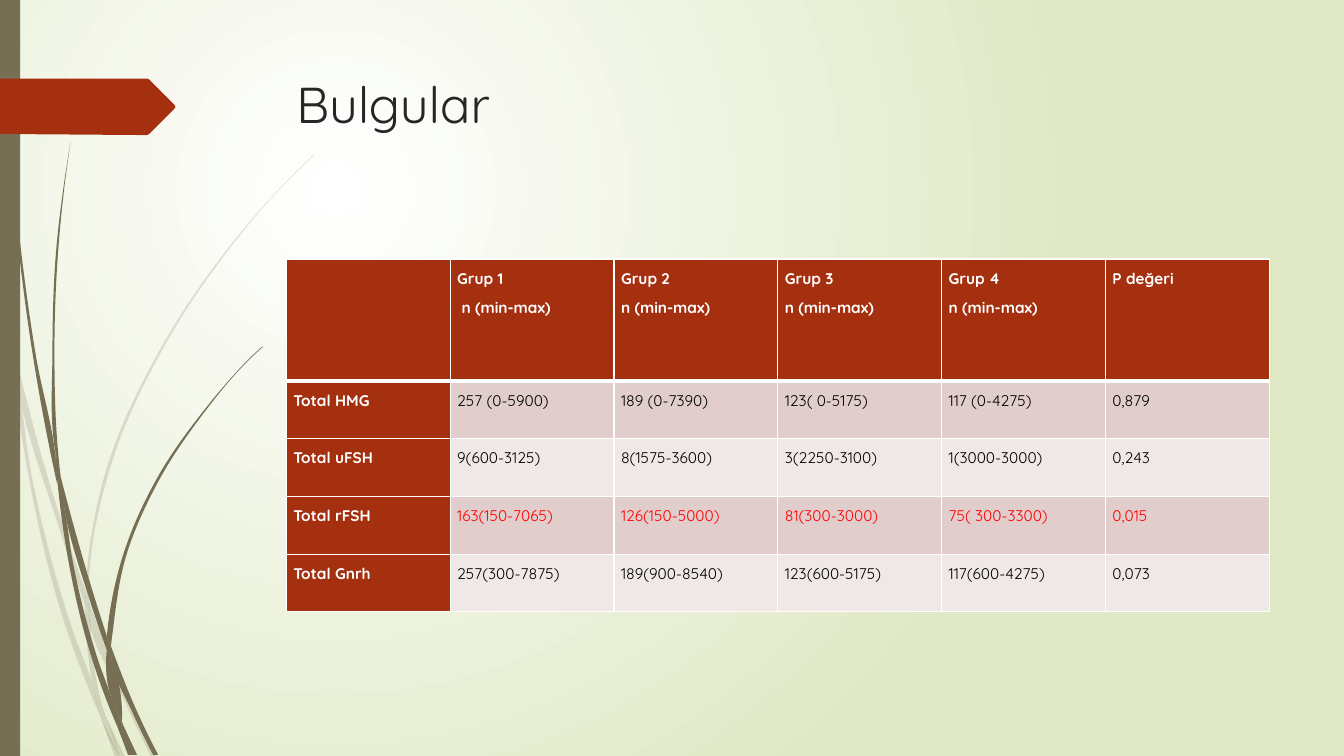
"""Build the findings slide: a title and a table of group results beside grass wisps."""
from lxml import etree
from pptx import Presentation
from pptx import util as u
from pptx.dml.color import RGBColor
from pptx.enum import shapes, text
from pptx.oxml.ns import qn

WHITE = RGBColor(0xFF, 0xFF, 0xFF)
BLACK = RGBColor(0, 0, 0)
RED = RGBColor(0xFF, 0, 0)
RUST = RGBColor(0xA5, 0x30, 0x10)
OLIVE = RGBColor(0x76, 0x6F, 0x54)
PALE_GREEN = RGBColor(0xDF, 0xE8, 0xC4)
CHARCOAL = RGBColor(0x26, 0x26, 0x26)
BANDS = [RGBColor(0xE1, 0xCD, 0xCC), RGBColor(0xF0, 0xE8, 0xE7)]
FONT = "Quicksand"

FAINT_WISPS = [
    [[(0.11, 3.5), (0.09, 3.22), (0, 2.82)], [(0, 2.99), (0.1, 3.44), (0.11, 3.5)]],
    [[(0.14, 3.45), (0.17, 3.76), (0.58, 5.22), (0.84, 5.99)],
     [(0.85, 5.86), (0.62, 5.2), (0.14, 3.45)]],
    [[(0.88, 5.96), (0.88, 6.1), (1.23, 6.94), (1.5, 7.51)],
     [(1.55, 7.51), (1.27, 6.92), (0.92, 6.07), (0.88, 5.96)]],
    [[(1.19, 7.51), (1.24, 7.51)], [(1.05, 7.11), (1.19, 7.51)]],
    [[(0.11, 3.5), (0.28, 4.7), (0.65, 6.21), (0.92, 6.93), (1.01, 7.14)],
     [(0.99, 7.07), (0.93, 6.83), (0.7, 6.19), (0.31, 4.69), (0.17, 3.76), (0.11, 3.5)]],
    [[(0.84, 5.99), (0.87, 6.46), (0.93, 6.83), (0.96, 6.92), (1.05, 7.11)],
     [(1.03, 7.06), (0.91, 6.46), (0.88, 6.1), (0.84, 5.99)]],
    [[(0.88, 5.96), (0.88, 5.84), (1.1, 4.62), (1.6, 3.49), (2.29, 2.45),
      (2.68, 1.98), (2.9, 1.75), (3.12, 1.54)],
     [(3.12, 1.53), (2.89, 1.75), (2.68, 1.97), (2.28, 2.44), (1.58, 3.48),
      (1.07, 4.61), (0.85, 5.84)]],
    [[(1.01, 7.14), (1.14, 7.51)], [(1.19, 7.51), (1.01, 7.14)]],
    [[(0.88, 6.1), (0.88, 5.96), (0.85, 5.86)], [(0.84, 5.99), (0.88, 6.08)]],
    [[(0.93, 6.83), (0.99, 7.07), (1.01, 7.14), (1.19, 7.51)],
     [(1.19, 7.51), (1.05, 7.11), (0.96, 6.92), (0.93, 6.83)]],
]
DARK_WISPS = [
    [[(0.03, 0), (0.04, 0.48), (0.07, 1.1), (0.17, 2.33), (0.33, 3.55), (0.56, 4.77)],
     [(0.57, 4.81), (0.55, 4.53), (0.36, 3.55), (0.19, 2.32), (0.08, 1.09),
      (0.05, 0.48), (0.04, 0)]],
    [[(0.6, 4.72), (0.64, 5.05), (0.88, 5.92), (1.06, 6.45)],
     [(1.06, 6.31), (0.93, 5.9), (0.6, 4.72)]],
    [[(1.1, 6.41), (1.11, 6.56), (1.32, 7.08), (1.52, 7.49)],
     [(1.57, 7.49), (1.36, 7.06), (1.13, 6.49), (1.1, 6.41)]],
    [[(0.57, 4.77), (0.68, 5.57), (0.93, 6.59), (1.11, 7.08), (1.17, 7.22)],
     [(1.16, 7.17), (1.1, 6.91), (0.98, 6.57), (0.72, 5.56), (0.64, 5.05), (0.57, 4.77)]],
    [[(0.6, 4.72), (0.58, 4.53), (0.54, 3.49), (0.58, 2.45), (0.63, 1.93), (0.7, 1.41)],
     [(0.7, 1.41), (0.62, 1.93), (0.56, 2.45), (0.52, 3.49), (0.55, 4.49), (0.6, 4.72)]],
    [[(1.33, 7.49), (1.36, 7.49)], [(1.22, 7.19), (1.33, 7.49)]],
    [[(0.55, 4.49), (0.57, 4.77), (0.64, 5.05)], [(0.6, 4.72), (0.55, 4.49)]],
    [[(1.1, 6.41), (1.11, 6.33), (1.25, 5.52), (1.58, 4.76), (2.05, 4.06),
      (2.31, 3.74), (2.45, 3.59), (2.61, 3.44)],
     [(2.6, 3.44), (2.45, 3.58), (2.31, 3.73), (2.04, 4.05), (1.56, 4.74),
      (1.22, 5.51), (1.06, 6.31)]],
    [[(1.17, 7.22), (1.27, 7.49)], [(1.31, 7.49), (1.17, 7.22)]],
    [[(1.06, 6.45), (1.1, 6.91), (1.16, 7.06), (1.22, 7.19)],
     [(1.21, 7.16), (1.11, 6.56), (1.06, 6.45)]],
    [[(1.06, 6.31), (1.06, 6.45), (1.11, 6.56)], [(1.1, 6.41), (1.06, 6.31)]],
    [[(1.1, 6.91), (1.17, 7.22), (1.3, 7.49)],
     [(1.33, 7.49), (1.22, 7.19), (1.16, 7.06), (1.1, 6.91)]],
]
ARROW_TAB = [(0, 0.78), (1.46, 0.78), (1.48, 0.79), (1.73, 1.04), (1.74, 1.06),
             (1.73, 1.08), (1.48, 1.33), (1.46, 1.34), (1.36, 1.34), (0, 1.33)]
RESULTS = [
    ["", "Grup 1\n n (min-max)", "Grup 2\nn (min-max)", "Grup 3\nn (min-max)",
     "Grup 4\nn (min-max)", "P değeri"],
    ["Total HMG", "257 (0-5900)", "189 (0-7390)", "123( 0-5175)", "117 (0-4275)", "0,879"],
    ["Total uFSH", "9(600-3125)", "8(1575-3600)", "3(2250-3100)", "1(3000-3000)", "0,243"],
    ["Total rFSH", "163(150-7065)", "126(150-5000)", "81(300-3000)", "75( 300-3300)", "0,015"],
    ["Total Gnrh", "257(300-7875)", "189(900-8540)", "123(600-5175)", "117(600-4275)", "0,073"],
]
SIGNIFICANT_ROW = 3


def write(frame, content, size=11, color=BLACK, bold=False, spacing=None):
    for index, line in enumerate(content.split("\n")):
        paragraph = frame.add_paragraph() if index else frame.paragraphs[0]
        paragraph.alignment = text.PP_ALIGN.LEFT
        paragraph.line_spacing = spacing
        run = paragraph.add_run()
        run.text = line
        run.font.name, run.font.size = FONT, u.Pt(size)
        run.font.color.rgb, run.font.bold = color, bold


def curve_handles(edge):
    points = [complex(*point) for point in edge]
    steps = [b - a for a, b in zip(points, points[1:])]
    if len(steps) < 2:
        return [None] * len(steps)
    slopes = [(a / abs(a) * abs(b) + b / abs(b) * abs(a)) / (abs(a) + abs(b))
              for a, b in zip(steps, steps[1:])]
    first, last = (2 * step / abs(step) - slope
                   for step, slope in ((steps[0], slopes[0]), (steps[-1], slopes[-1])))
    slopes = [first, *slopes, last]
    return [(points[i] + slopes[i] * abs(step) / 3, points[i + 1] - slopes[i + 1] * abs(step) / 3)
            for i, step in enumerate(steps)]


class SlideBuilder:
    def __init__(self, presentation):
        self.layout = presentation.slide_layouts[5]
        for placeholder in list(self.layout.placeholders)[1:]:
            self.layout.shapes.element.remove(placeholder.element)
        self.slide = presentation.slides.add_slide(self.layout)

    def background(self, center, edge):
        fill = self.slide.background.fill
        fill.gradient()
        for stop, color in zip(fill.gradient_stops, (center, edge)):
            stop.color.rgb = color
        linear = self.slide.element.find(".//" + qn("a:lin"))
        circle = etree.Element(qn("a:path"), path="circle")
        etree.SubElement(circle, qn("a:fillToRect"), l="50000", t="50000", r="100000", b="100000")
        linear.getparent().replace(linear, circle)

    def paint(self, shape, color, opacity=100):
        shape.shadow.inherit = False
        shape.line.fill.background()
        shape.fill.solid()
        shape.fill.fore_color.rgb = color
        if opacity < 100:
            value = shape.element.spPr.find(".//" + qn("a:srgbClr"))
            etree.SubElement(value, qn("a:alpha"), val=str(opacity * 1000))

    def outline(self, container, edges, color, opacity=100):
        points = [(u.Inches(x), u.Inches(y)) for edge in edges for x, y in edge]
        left, top = map(min, zip(*points))
        builder = container.build_freeform(*points[0])
        builder.add_line_segments(points[1:], close=True)
        shape = builder.convert_to_shape()
        handles = [pair for edge in edges for pair in (None, *curve_handles(edge))][1:]
        for line, pair in zip(list(shape.element.iter(qn("a:lnTo"))), handles):
            if pair:
                line.tag = qn("a:cubicBezTo")
                for index, handle in enumerate(pair):
                    line.insert(index, line.makeelement(qn("a:pt"), {
                        "x": str(u.Inches(handle.real) - left),
                        "y": str(u.Inches(handle.imag) - top)}))
        self.paint(shape, color, opacity)
        return shape

    def wisps(self, blades, opacity=100):
        group = self.slide.shapes.add_group_shape()
        for edges in blades:
            self.outline(group.shapes, edges, OLIVE, opacity)
        self.send_to_layout(group)

    def bar(self, left, top, width, height):
        box = map(u.Inches, (left, top, width, height))
        shape = self.slide.shapes.add_shape(shapes.MSO_SHAPE.RECTANGLE, *box)
        self.paint(shape, OLIVE)
        self.send_to_layout(shape)

    def tab(self, points):
        edges = [[point] for point in points]
        self.send_to_layout(self.outline(self.slide.shapes, edges, RUST))

    def send_to_layout(self, shape):
        self.layout.shapes.element.append(shape.element)

    def title(self, content, left, top, width, height):
        shape = self.slide.shapes.title
        shape.left, shape.top, shape.width, shape.height = map(
            u.Inches, (left, top, width, height))
        frame = shape.text_frame
        frame.auto_size = text.MSO_AUTO_SIZE.NONE
        frame.vertical_anchor = text.MSO_ANCHOR.TOP
        write(frame, content, size=36, color=CHARCOAL)

    def border(self, cell, side, points):
        line = etree.SubElement(cell._tc.get_or_add_tcPr(), qn("a:ln" + side), w=str(u.Pt(points)))
        fill = etree.SubElement(line, qn("a:solidFill"))
        etree.SubElement(fill, qn("a:srgbClr"), val=str(WHITE))

    def table(self, rows, left, top, width, height, header_height):
        table = self.slide.shapes.add_table(
            len(rows), len(rows[0]), *map(u.Inches, (left, top, width, height))).table
        row_height = (height - header_height) / (len(rows) - 1)
        for row, values in enumerate(rows):
            table.rows[row].height = u.Inches(row_height if row else header_height)
            for column, value in enumerate(values):
                cell = table.cell(row, column)
                cell.margin_left = cell.margin_right = u.Inches(0.07)
                cell.margin_top = cell.margin_bottom = 0
                heading = row == 0 or column == 0
                for side in "LRTB":
                    self.border(cell, side, 3 if (row, side) in ((0, "B"), (1, "T")) else 1)
                cell.fill.solid()
                cell.fill.fore_color.rgb = RUST if heading else BANDS[(row - 1) % 2]
                body_color = RED if row == SIGNIFICANT_ROW else BLACK
                if value:
                    write(cell.text_frame, value, color=WHITE if heading else body_color,
                          bold=heading, spacing=1.5)


def main():
    presentation = Presentation()
    presentation.slide_width, presentation.slide_height = u.Inches(13.33), u.Inches(7.5)
    builder = SlideBuilder(presentation)
    builder.background(WHITE, PALE_GREEN)
    builder.wisps(FAINT_WISPS, opacity=20)
    builder.wisps(DARK_WISPS)
    builder.bar(0, 0, 0.2, 7.5)
    builder.tab(ARROW_TAB)
    builder.title("Bulgular", 2.84, 0.68, 9.75, 1.4)
    builder.table(RESULTS, 2.84, 2.57, 9.75, 3.5, header_height=1.21)
    presentation.save("out.pptx")


if __name__ == "__main__":
    main()
